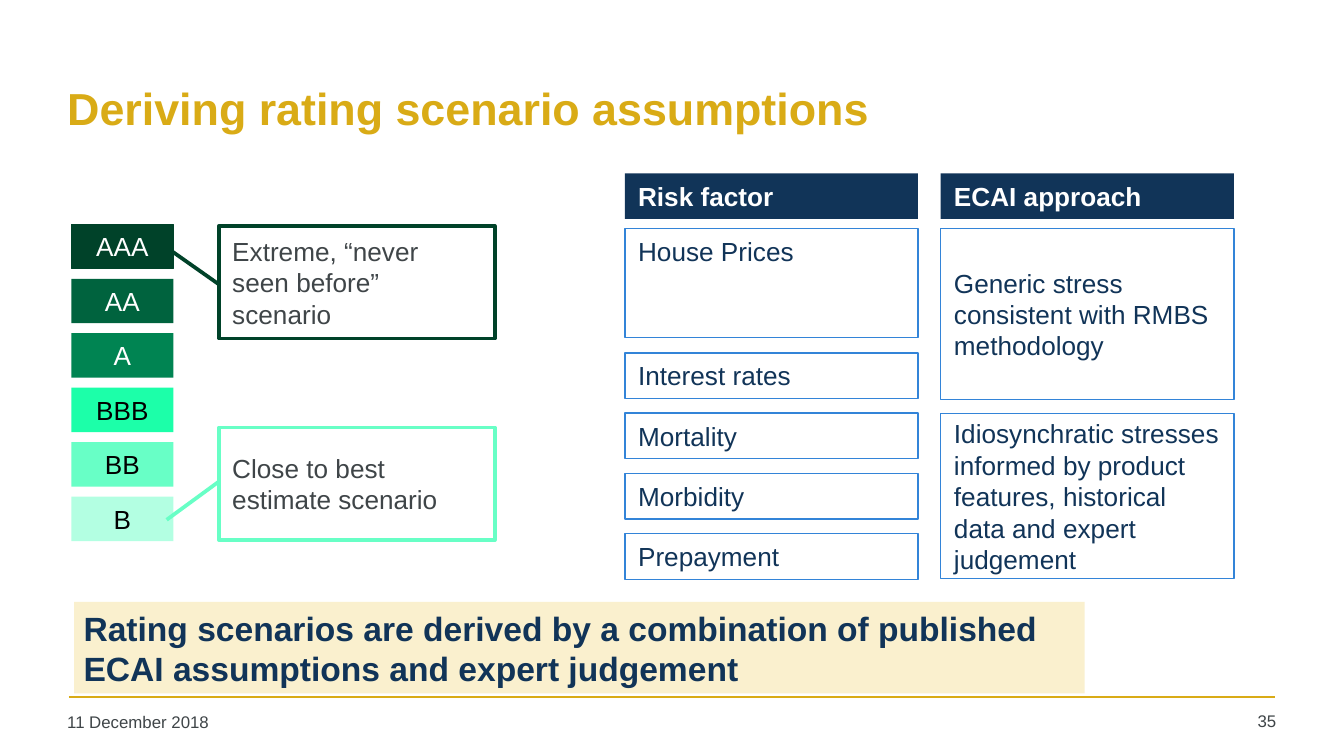
from dataclasses import dataclass

from lxml import etree
from pptx import Presentation
from pptx import util as u
from pptx.dml.color import RGBColor
from pptx.enum import shapes, text
from pptx.oxml.ns import qn

Cm = u.Cm
LEFT, MID, RIGHT = text.PP_ALIGN.LEFT, text.PP_ALIGN.CENTER, text.PP_ALIGN.RIGHT
TOP, CENTRE = text.MSO_ANCHOR.TOP, text.MSO_ANCHOR.MIDDLE


@dataclass(frozen=True)
class Theme:
    font: str = "Arial"
    gold: str = "D9AB16"
    cream: str = "FAF0CE"
    navy: str = "113458"
    blue: str = "3384D8"
    grey: str = "3F4548"
    white: str = "FFFFFF"
    black: str = "000000"
    greens: tuple = ("004229", "00633E", "008452", "1CFFA9", "68FFC6", "B3FFE2")
    head: int = 24
    claim: int = 18
    body: int = 14
    foot: int = 9


class Deck:
    def __init__(self, theme):
        self.theme = theme
        self.prs = Presentation()
        self.prs.slide_width, self.prs.slide_height = Cm(25.4), Cm(14.29)
        self.slide = self.prs.slides.add_slide(self.prs.slide_layouts[5])

    def letter(self, shape, words, size, ink, bold=False, align=LEFT, anchor=TOP, tight=False):
        frame = shape.text_frame
        frame.word_wrap = True
        frame.auto_size = text.MSO_AUTO_SIZE.NONE
        frame.vertical_anchor = anchor
        side, edge = (Cm(0.18), Cm(0.1)) if tight else (Cm(0.25), Cm(0.13))
        frame.margin_left = frame.margin_right = side
        frame.margin_top = frame.margin_bottom = edge
        frame.text = words
        para = frame.paragraphs[0]
        para.alignment = align
        font = para.font
        font.name, font.size, font.bold = self.theme.font, u.Pt(size), bold
        font.color.rgb = RGBColor.from_string(ink)

    def paint(self, shape, fill=None, line=None, width=0.75):
        shape.shadow.inherit = False
        if fill:
            shape.fill.solid()
            shape.fill.fore_color.rgb = RGBColor.from_string(fill)
        else:
            shape.fill.background()
        if line:
            shape.line.color.rgb = RGBColor.from_string(line)
            shape.line.width = u.Pt(width)
        else:
            shape.line.fill.background()

    def title(self, words, *area):
        shape = self.slide.shapes.title
        shape.left, shape.top, shape.width, shape.height = map(Cm, area)
        self.letter(shape, words, self.theme.head, self.theme.gold, True, anchor=CENTRE, tight=True)

    def label(self, words, *area, align=LEFT):
        shape = self.slide.shapes.add_textbox(*map(Cm, area))
        self.letter(shape, words, self.theme.foot, self.theme.grey, align=align, tight=True)

    def box(self, words, *area, ink, size=None, fill=None, line=None, **style):
        shape = self.slide.shapes.add_shape(shapes.MSO_SHAPE.RECTANGLE, *map(Cm, area))
        self.paint(shape, fill, line)
        self.letter(shape, words, size or self.theme.body, ink, **style)

    def callout(self, words, *area, line, points):
        shape = self.slide.shapes.add_shape(shapes.MSO_SHAPE.LINE_CALLOUT_1, *map(Cm, area))
        for spot, value in enumerate(points):
            shape.adjustments[spot] = value
        self.paint(shape, line=line, width=2)
        self.letter(shape, words, self.theme.body, self.theme.grey, anchor=CENTRE)

    def rule(self, *ends, ink):
        line = self.slide.shapes.add_connector(shapes.MSO_CONNECTOR.STRAIGHT, *map(Cm, ends))
        line.line.color.rgb = RGBColor.from_string(ink)
        line.line.width = u.Pt(1)
        etree.SubElement(line._element.spPr, qn("a:effectLst"))


def main():
    theme = Theme()
    deck = Deck(theme)
    deck.rule(1.3, 13.18, 24.1, 13.18, ink=theme.gold)
    deck.title("Deriving rating scenario assumptions", 1.09, 0.84, 23.04, 2.39)
    deck.label("11 December 2018", 1.09, 13.36, 5.59, 0.69)
    deck.label("35", 22.5, 13.34, 1.8, 0.71, align=RIGHT)

    grades = ("AAA", "AA", "A", "BBB", "BB", "B")
    for row, (grade, green) in enumerate(zip(grades, theme.greens)):
        deck.box(grade, 1.35, 4.24 + 1.03 * row, 1.93, 0.84, fill=green,
                 line=None if row else green,
                 ink=theme.white if row < 3 else theme.black, align=MID, anchor=CENTRE)

    deck.callout("Extreme, “never seen before” scenario", 4.14, 4.27, 5.21, 2.13,
                 line=theme.greens[0], points=(0.52, 0, 0.21, -0.18))
    deck.callout("Close to best estimate scenario", 4.14, 8.08, 5.21, 2.13,
                 line=theme.greens[4], points=(0.48, 0, 0.82, -0.19))

    risk, means, wide, high = 11.81, 17.78, 5.54, 0.86
    for left, head in ((risk, "Risk factor"), (means, "ECAI approach")):
        deck.box(head, left, 3.28, wide, high, fill=theme.navy, ink=theme.white, bold=True)

    frame = {"line": theme.blue, "ink": theme.navy}
    deck.box("House Prices", risk, 4.32, wide, 2.06, **frame)
    for row, factor in enumerate(("Interest rates", "Mortality", "Morbidity", "Prepayment")):
        deck.box(factor, risk, 6.67 + 1.14 * row, wide, high, **frame)
    deck.box("Generic stress consistent with RMBS methodology",
             means, 4.32, wide, 3.23, anchor=CENTRE, **frame)
    deck.box("Idiosynchratic stresses informed by product features, "
             "historical data and expert judgement",
             means, 7.82, wide, 3.12, anchor=CENTRE, **frame)

    deck.box("Rating scenarios are derived by a combination of published "
             "ECAI assumptions and expert judgement",
             1.4, 11.38, 19.1, 1.73, fill=theme.cream, ink=theme.navy,
             size=theme.claim, bold=True, anchor=CENTRE, tight=True)
    deck.prs.save("out.pptx")


if __name__ == "__main__":
    main()
